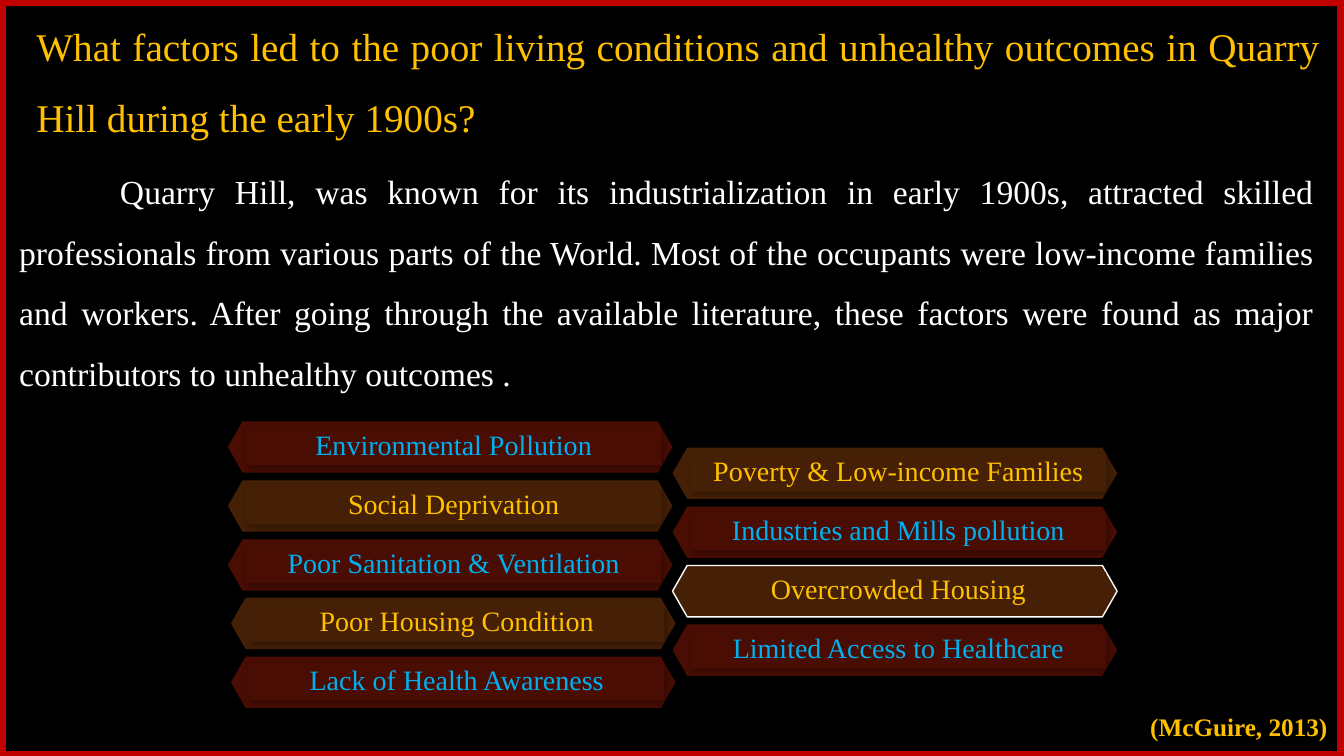
from lxml import etree
from pptx import Presentation
from pptx.dml.color import RGBColor
from pptx.enum.shapes import MSO_SHAPE
from pptx.enum.text import MSO_ANCHOR, MSO_AUTO_SIZE, PP_ALIGN
from pptx.oxml import parse_xml
from pptx.util import Inches, Pt

HEXAGON, RECTANGLE = MSO_SHAPE.HEXAGON, MSO_SHAPE.RECTANGLE
MIDDLE, TOP = MSO_ANCHOR.MIDDLE, MSO_ANCHOR.TOP
CENTER, JUSTIFY, LEFT = PP_ALIGN.CENTER, PP_ALIGN.JUSTIFY, PP_ALIGN.LEFT
NO_AUTOFIT = MSO_AUTO_SIZE.NONE
DRAWING = "http://schemas.openxmlformats.org/drawingml/2006/main"

BLACK, WHITE, FRAME_RED = "000000", "FFFFFF", "C00000"
GOLD, BLUE = "FFC000", "00B0F0"
RED_STYLE, BROWN_STYLE = ("490D03", BLUE), ("462006", GOLD)

TITLE = ("What factors led to the poor living conditions and unhealthy outcomes "
         "in Quarry Hill during the early 1900s?")
BODY = ("Quarry Hill, was known for its industrialization in early 1900s, attracted "
        "skilled professionals from various parts of the World. Most of the occupants "
        "were low-income families and workers. After going through the available "
        "literature, these factors were found as major contributors to unhealthy outcomes .")
HIGHLIGHTED = "Overcrowded Housing"
FACTOR_COLUMNS = [
    (2.26, 4.18, [("Environmental Pollution", RED_STYLE),
                  ("Social Deprivation", BROWN_STYLE),
                  ("Poor Sanitation & Ventilation", RED_STYLE)]),
    (2.29, 5.93, [("Poor Housing Condition", BROWN_STYLE),
                  ("Lack of Health Awareness", RED_STYLE)]),
    (6.67, 4.44, [("Poverty & Low-income Families", BROWN_STYLE),
                  ("Industries and Mills pollution", RED_STYLE),
                  (HIGHLIGHTED, BROWN_STYLE),
                  ("Limited Access to Healthcare", RED_STYLE)]),
]
FACTOR_PITCH = 0.585


def color(hex_string):
    """Return the colour for a hex string."""
    return RGBColor.from_string(hex_string)


def place(shape, left, top, width, height):
    """Move a shape to a box given in inches."""
    shape.left, shape.top = Inches(left), Inches(top)
    shape.width, shape.height = Inches(width), Inches(height)


def write(shape, text, size, text_color, alignment, spacing, anchor, bold=False):
    """Fill a shape with one formatted paragraph and return it."""
    frame = shape.text_frame
    frame.word_wrap = True
    frame.auto_size = NO_AUTOFIT
    frame.vertical_anchor = anchor
    paragraph = frame.paragraphs[0]
    paragraph.text = text
    paragraph.alignment = alignment
    paragraph.line_spacing = spacing
    paragraph.space_before = Pt(0)
    font = paragraph.font
    font.name, font.size, font.bold = "Times New Roman", Pt(size), bold
    font.color.rgb = color(text_color)
    return paragraph


def indent(paragraph, margin, first_line):
    """Set the left margin and first-line indent of a paragraph in inches."""
    properties = paragraph._p.get_or_add_pPr()
    properties.set("marL", str(Inches(margin)))
    properties.set("indent", str(Inches(first_line)))


def add_shadow(shape):
    """Give a shape a soft offset shadow."""
    effects = shape._element.spPr.find(f"{{{DRAWING}}}effectLst")
    effects.append(parse_xml(
        f'<a:outerShdw xmlns:a="{DRAWING}" blurRad="{Pt(4.5)}" dist="{Pt(2.6)}" '
        f'dir="{53 * 60000}" rotWithShape="0"><a:srgbClr val="{BLACK}">'
        '<a:alpha val="30000"/></a:srgbClr></a:outerShdw>'))


def add_frame(slide, left, top, width, height):
    """Draw the red border around the slide."""
    border = slide.shapes.add_shape(
        RECTANGLE, Inches(left), Inches(top), Inches(width), Inches(height))
    border.shadow.inherit = False
    border.fill.background()
    border.line.color.rgb = color(FRAME_RED)
    border.line.width = Pt(6)


def add_title(slide, left, top, width, height):
    """Place the question in the title placeholder."""
    title = slide.shapes.title
    place(title, left, top, width, height)
    paragraph = write(title, TITLE, 28, GOLD, JUSTIFY, 1.5, MIDDLE)
    indent(paragraph, 0.13, 0)


def add_body(slide, left, top, width, height):
    """Place the introduction in the body placeholder without a bullet."""
    body = slide.placeholders[1]
    place(body, left, top, width, height)
    properties = body.text_frame.paragraphs[0]._p.get_or_add_pPr()
    etree.SubElement(properties, f"{{{DRAWING}}}buNone")
    paragraph = write(body, BODY, 24, WHITE, JUSTIFY, 1.5, TOP)
    indent(paragraph, 0, 1)


def add_factor(slide, left, top, text, style):
    """Draw one hexagonal banner with its label panel."""
    fill_color, text_color = style
    banner = slide.shapes.add_shape(
        HEXAGON, Inches(left), Inches(top), Inches(4.41), Inches(0.51))
    banner.adjustments[0] = 0.286
    label = slide.shapes.add_shape(
        RECTANGLE, Inches(left + 0.18), Inches(top + 0.065), Inches(4.12), Inches(0.37))
    for shape in (banner, label):
        shape.shadow.inherit = False
        shape.fill.solid()
        shape.fill.fore_color.rgb = color(fill_color)
        shape.line.fill.background()
        if text != HIGHLIGHTED:
            add_shadow(shape)
    if text == HIGHLIGHTED:
        banner.line.color.rgb = color(WHITE)
        banner.line.width = Pt(1)
    frame = label.text_frame
    frame.margin_left = frame.margin_right = Inches(0.04)
    frame.margin_top = frame.margin_bottom = Inches(0.04)
    write(label, text, 20, text_color, CENTER, 0.9, MIDDLE)


def add_factor_column(slide, left, top, factors):
    """Stack factor banners downwards at an equal pitch."""
    for row, (text, style) in enumerate(factors):
        add_factor(slide, left, top + row * FACTOR_PITCH, text, style)


def add_citation(slide, left, top, width, height):
    """Add the source reference."""
    citation = slide.shapes.add_textbox(
        Inches(left), Inches(top), Inches(width), Inches(height))
    write(citation, "(McGuire, 2013)", 18, GOLD, LEFT, 1.15, TOP, bold=True)


def main():
    """Build and save the slide."""
    presentation = Presentation()
    presentation.slide_width, presentation.slide_height = Inches(13.33), Inches(7.5)
    slide = presentation.slides.add_slide(presentation.slide_layouts[1])
    slide.background.fill.solid()
    slide.background.fill.fore_color.rgb = color(BLACK)
    add_frame(slide, 0.02, 0.02, 13.28, 7.47)
    add_title(slide, 0.13, 0.3, 13.06, 0.78)
    add_body(slide, 0.09, 1.45, 13.04, 2.73)
    for left, top, factors in FACTOR_COLUMNS:
        add_factor_column(slide, left, top, factors)
    add_citation(slide, 11.31, 6.96, 2.13, 0.43)
    presentation.save("out.pptx")


if __name__ == "__main__":
    main()
